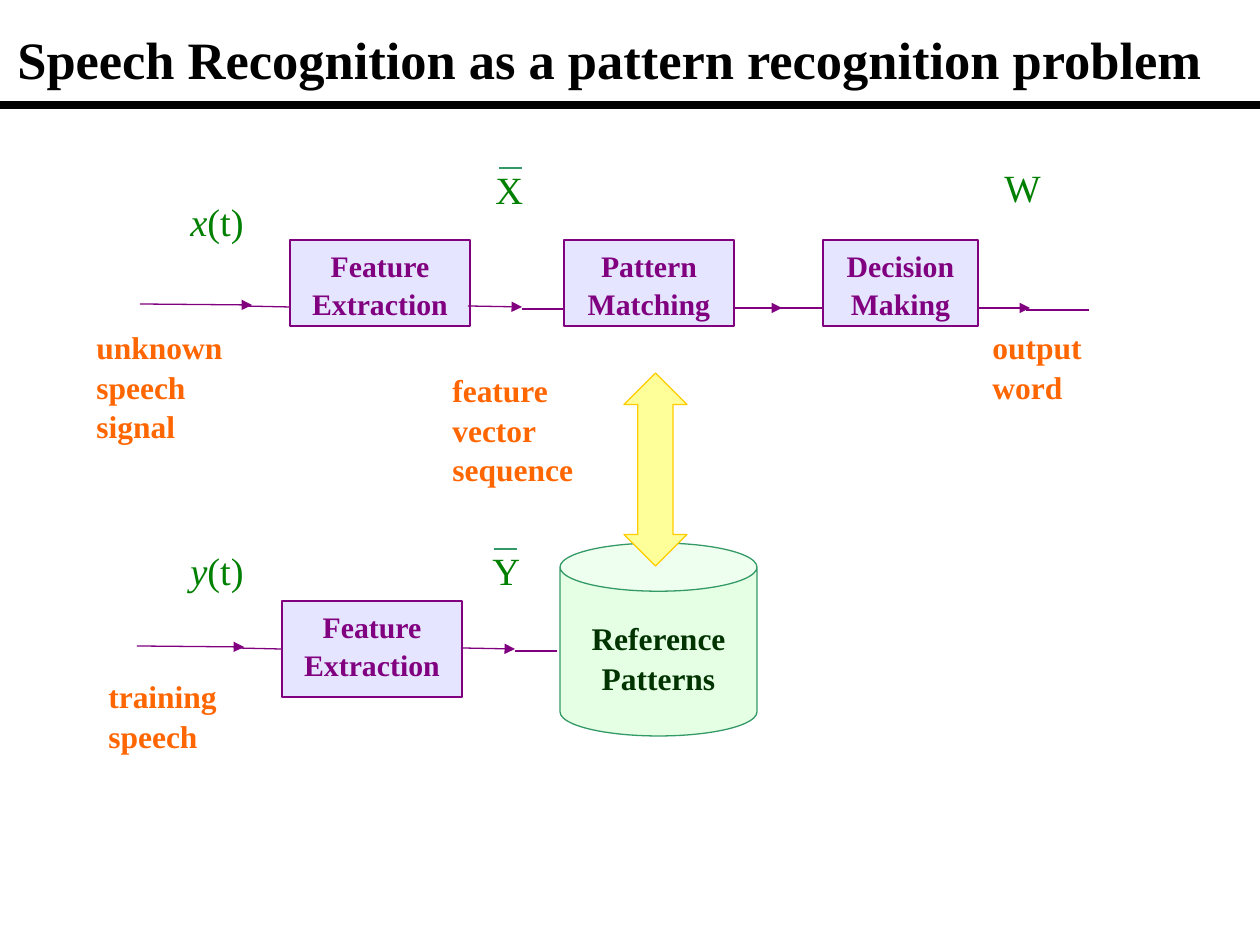
from lxml import etree
from pptx import Presentation, util as u
from pptx.dml.color import RGBColor
from pptx.enum import shapes, text
from pptx.oxml import ns

PX = 914400 / 126
FONT = "Times New Roman"
BLACK = RGBColor(0x00, 0x00, 0x00)
PURPLE = RGBColor(0x80, 0x00, 0x80)
LAVENDER = RGBColor(0xCC, 0xCC, 0xFF)
GREEN = RGBColor(0x00, 0x80, 0x00)
DARK_GREEN = RGBColor(0x00, 0x33, 0x00)
SEA_GREEN = RGBColor(0x33, 0x99, 0x66)
MINT = RGBColor(0xCC, 0xFF, 0xCC)
ORANGE = RGBColor(0xFF, 0x66, 0x00)
YELLOW = RGBColor(0xFF, 0xFF, 0x99)
GOLD = RGBColor(0xFF, 0xCC, 0x00)

BOX = {"size": u.Pt(17), "bold": True, "color": PURPLE}
CAPTION = {"size": u.Pt(18), "bold": True, "color": ORANGE}
STORE = {"size": u.Pt(18), "bold": True, "color": DARK_GREEN}
SYMBOL = {"size": u.Pt(22), "color": GREEN}
TITLE = {"size": u.Pt(30), "bold": True, "color": BLACK}

presentation = Presentation()
presentation.slide_width = u.Inches(10)
presentation.slide_height = u.Inches(7.5)
slide = presentation.slides.add_slide(presentation.slide_layouts[6])


def write(shape, runs, style, align=text.PP_ALIGN.LEFT, spacing=1.05, top=6):
    """Fill a shape with one paragraph of (wording, italic) runs."""
    frame = shape.text_frame
    frame.word_wrap = True
    frame.vertical_anchor = text.MSO_ANCHOR.TOP
    frame.margin_top = int(top * PX)
    paragraph = frame.paragraphs[0]
    paragraph.alignment = align
    paragraph.line_spacing = spacing
    for wording, italic in runs:
        run = paragraph.add_run()
        run.text = wording
        for name, value in {"name": FONT, "italic": italic, **style}.items():
            if name == "color":
                run.font.color.rgb = value
            else:
                setattr(run.font, name, value)


def connect(x1, y1, x2, y2, color, width=0.75, arrow=False):
    """Draw a straight line, with an arrowhead at its end if asked."""
    ends = [int(value * PX) for value in (x1, y1, x2, y2)]
    line = slide.shapes.add_connector(shapes.MSO_CONNECTOR.STRAIGHT, *ends)
    line.line.color.rgb = color
    line.line.width = u.Pt(width)
    if arrow:
        etree.SubElement(line.line._get_or_add_ln(), ns.qn("a:tailEnd"), type="triangle")
    etree.SubElement(line._element.spPr, ns.qn("a:effectLst"))


# Process boxes, reference store and double arrow
KIND = shapes.MSO_SHAPE
blocks = [
    (KIND.RECTANGLE, 290, 240, 180, 86, LAVENDER, PURPLE, "Feature Extraction", BOX),
    (KIND.RECTANGLE, 564, 240, 170, 86, LAVENDER, PURPLE, "Pattern Matching", BOX),
    (KIND.RECTANGLE, 823, 240, 155, 86, LAVENDER, PURPLE, "Decision Making", BOX),
    (KIND.RECTANGLE, 282, 601, 180, 96, LAVENDER, PURPLE, "Feature Extraction", BOX),
    (KIND.CAN, 560, 543, 197, 193, MINT, SEA_GREEN, "Reference Patterns", STORE),
    (KIND.UP_DOWN_ARROW, 624, 373, 63, 193, YELLOW, GOLD, None, None),
]
for kind, left, top, width, height, fill, outline, label, style in blocks:
    place = [int(value * PX) for value in (left, top, width, height)]
    shape = slide.shapes.add_shape(kind, *place)
    shape.shadow.inherit = False
    shape.fill.solid()
    shape.fill.fore_color.rgb = fill
    shape.line.color.rgb = outline
    shape.line.width = u.Pt(0.75)
    if kind == KIND.UP_DOWN_ARROW:
        shape.adjustments[0] = 0.5
        shape.adjustments[1] = 0.56
    else:
        color = shape._element.spPr.find(".//" + ns.qn("a:srgbClr"))
        etree.SubElement(color, ns.qn("a:alpha"), val="50000")
        inset = 26 if kind == KIND.CAN else 6
        write(shape, [(label, False)], style, text.PP_ALIGN.CENTER, top=inset)

# Signal flow: each link is an arrow followed by a plain piece
links = [
    ((140, 304, 252, 305), (243, 306, 289, 307)),
    ((468, 306, 522, 307), (522, 309, 564, 309)),
    ((734, 308, 782, 308), (780, 308, 823, 308)),
    ((979, 308, 1030, 308), (1026, 310, 1089, 310)),
    ((137, 646, 244, 647), (236, 648, 281, 649)),
    ((461, 648, 515, 649), (515, 651, 557, 651)),
]
for arrow, piece in links:
    connect(*arrow, PURPLE, arrow=True)
    connect(*piece, PURPLE)

# Bars over the vector symbols X and Y
for left, top in ((499, 168), (494, 549)):
    connect(left, top, left + 23, top, SEA_GREEN)

# Title, symbols and captions
labels = [
    (5, 15, 1259, 87, [("Speech Recognition as a pattern recognition problem", False)], TITLE),
    (178, 192, 105, 129, [("x", True), ("(t)", False)], SYMBOL),
    (178, 541, 105, 129, [("y", True), ("(t)", False)], SYMBOL),
    (483, 160, 69, 107, [("X", False)], SYMBOL),
    (480, 541, 69, 107, [("Y", False)], SYMBOL),
    (992, 158, 69, 107, [("W", False)], SYMBOL),
    (84, 320, 174, 171, [("unknown speech signal", False)], CAPTION),
    (440, 363, 174, 171, [("feature vector sequence", False)], CAPTION),
    (980, 320, 129, 129, [("output word", False)], CAPTION),
    (96, 669, 175, 129, [("training speech", False)], CAPTION),
]
for left, top, width, height, runs, style in labels:
    place = [int(value * PX) for value in (left, top, width, height)]
    box = slide.shapes.add_textbox(*place)
    write(box, runs, style, spacing=1.05 if style is CAPTION else 1.0)
    if style is TITLE:
        box.text_frame.vertical_anchor = text.MSO_ANCHOR.MIDDLE

# Rule under the title
connect(0, 105, 1260, 105, BLACK, width=4.5)

presentation.save("out.pptx")
